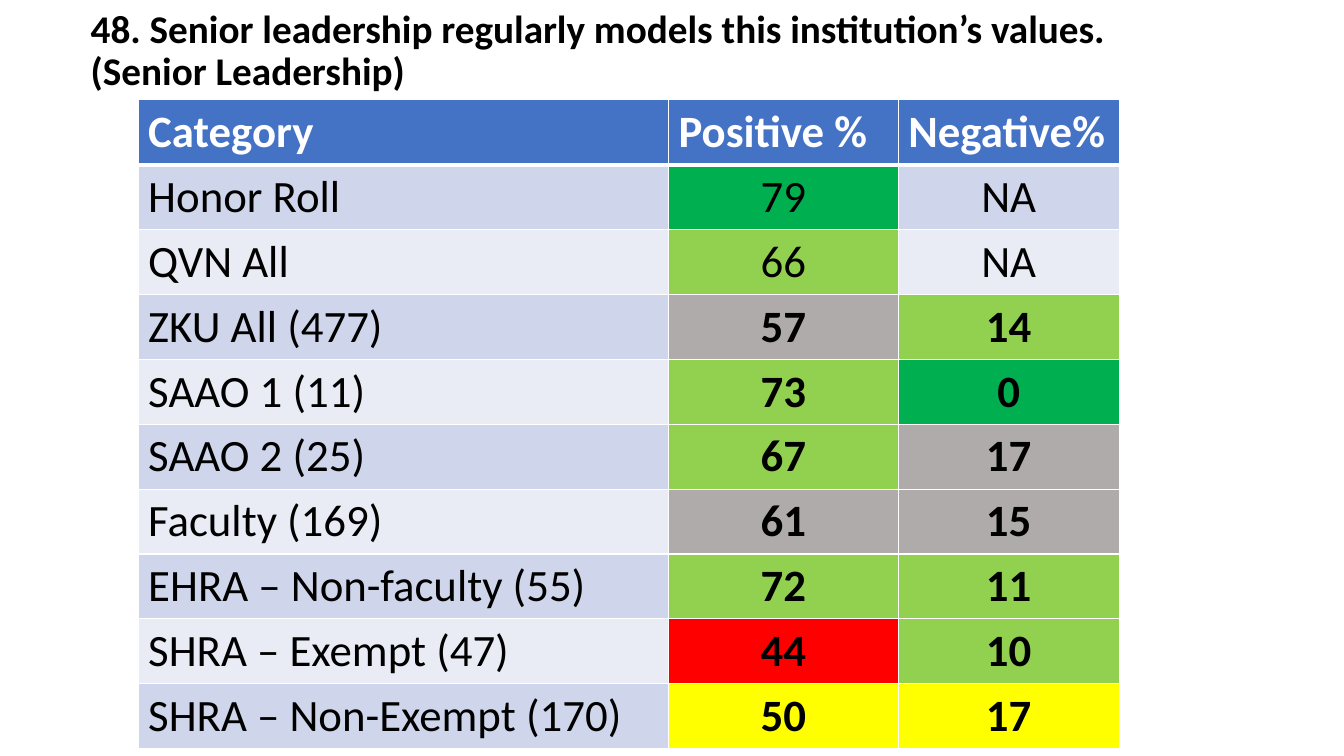
from dataclasses import dataclass

from lxml.etree import SubElement
from pptx import Presentation
from pptx.dml.color import RGBColor
from pptx.enum.text import MSO_ANCHOR, MSO_AUTO_SIZE, PP_ALIGN
from pptx.oxml.ns import qn
from pptx.util import Inches, Pt


@dataclass(frozen=True)
class Theme:
    font: str = "Calibri"
    title_size: int = 28
    table_size: int = 32
    text: str = "000000"
    white: str = "FFFFFF"
    header: str = "4472C4"
    bands: tuple = ("CFD5EA", "E9EBF5")
    dark_green: str = "00B050"
    green: str = "92D050"
    gray: str = "AFABAB"
    yellow: str = "FFFF00"
    red: str = "FF0000"


THEME = Theme()

QUESTION = ("48. Senior leadership regularly models this institution’s values. "
            "(Senior Leadership)")
HEADINGS = ("Category", "Positive %", "Negative%")
# Category, positive score and its colour, negative score and its colour
RESULTS = [
    ("Honor Roll", "79", THEME.dark_green, "NA", None),
    ("QVN All", "66", THEME.green, "NA", None),
    ("ZKU All (477)", "57", THEME.gray, "14", THEME.green),
    ("SAAO 1 (11)", "73", THEME.green, "0", THEME.dark_green),
    ("SAAO 2 (25)", "67", THEME.green, "17", THEME.gray),
    ("Faculty (169)", "61", THEME.gray, "15", THEME.gray),
    ("EHRA – Non-faculty (55)", "72", THEME.green, "11", THEME.green),
    ("SHRA – Exempt (47)", "44", THEME.red, "10", THEME.green),
    ("SHRA – Non-Exempt (170)", "50", THEME.yellow, "17", THEME.yellow),
]
BENCHMARK_ROWS = 2  # the leading rows, whose scores are not bold
COLUMN_WIDTHS = (5.26, 2.28, 2.19)
TABLE_HEIGHT = 6.33
MIN_ROW_HEIGHT = 0.41  # rows grow from here to fit their text


def style_paragraph(paragraph, size, color, bold, align=PP_ALIGN.LEFT):
    paragraph.alignment = align
    font = paragraph.font
    font.name = THEME.font
    font.size = Pt(size)
    font.bold = bold
    font.color.rgb = RGBColor.from_string(color)


def set_borders(cell, bottom=1):
    """Draw white borders, 1 pt wide except for the bottom one."""
    properties = cell._tc.get_or_add_tcPr()
    widths = {"a:lnL": 1, "a:lnR": 1, "a:lnT": 1, "a:lnB": bottom}
    for side, width in widths.items():
        line = SubElement(properties, qn(side), w=str(Pt(width)))
        fill = SubElement(line, qn("a:solidFill"))
        SubElement(fill, qn("a:srgbClr"), val=THEME.white)


def fill_cell(cell, text, fill, color=THEME.text, bold=False,
              align=PP_ALIGN.LEFT, bottom=1):
    cell.text = text
    style_paragraph(cell.text_frame.paragraphs[0], THEME.table_size, color, bold, align)
    set_borders(cell, bottom)
    cell.fill.solid()
    cell.fill.fore_color.rgb = RGBColor.from_string(fill)


def add_title(slide):
    title = slide.shapes.title
    title.left, title.top = Inches(0.8), Inches(0.16)
    title.width, title.height = Inches(11.16), Inches(0.71)
    frame = title.text_frame
    frame.text = QUESTION
    frame.word_wrap = True
    frame.auto_size = MSO_AUTO_SIZE.NONE
    frame.vertical_anchor = MSO_ANCHOR.MIDDLE
    paragraph = frame.paragraphs[0]
    paragraph.line_spacing = 0.9
    style_paragraph(paragraph, THEME.title_size, THEME.text, bold=True)


def add_results_table(slide):
    results_frame = slide.shapes.add_table(
        len(RESULTS) + 1, len(HEADINGS), Inches(1.37), Inches(0.99),
        Inches(sum(COLUMN_WIDTHS)), Inches(TABLE_HEIGHT))
    table = results_frame.table
    for column, width in zip(table.columns, COLUMN_WIDTHS):
        column.width = Inches(width)
    for row in table.rows:
        row.height = Inches(MIN_ROW_HEIGHT)
    results_frame.height = Inches(TABLE_HEIGHT)

    for column, heading in enumerate(HEADINGS):
        fill_cell(table.cell(0, column), heading, THEME.header, THEME.white,
                  bold=True, bottom=3)
    for index, (category, positive, positive_fill, negative, negative_fill) in enumerate(RESULTS):
        row = index + 1
        band = THEME.bands[index % 2]
        fill_cell(table.cell(row, 0), category, band)
        scores = ((positive, positive_fill), (negative, negative_fill))
        for column, (score, fill) in enumerate(scores, start=1):
            fill_cell(table.cell(row, column), score, fill or band,
                      bold=index >= BENCHMARK_ROWS, align=PP_ALIGN.CENTER)


def main():
    presentation = Presentation()
    presentation.slide_width = Inches(13.33)
    presentation.slide_height = Inches(7.5)
    title_only = presentation.slide_layouts[5]
    slide = presentation.slides.add_slide(title_only)
    add_title(slide)
    add_results_table(slide)
    presentation.save("out.pptx")


if __name__ == "__main__":
    main()
